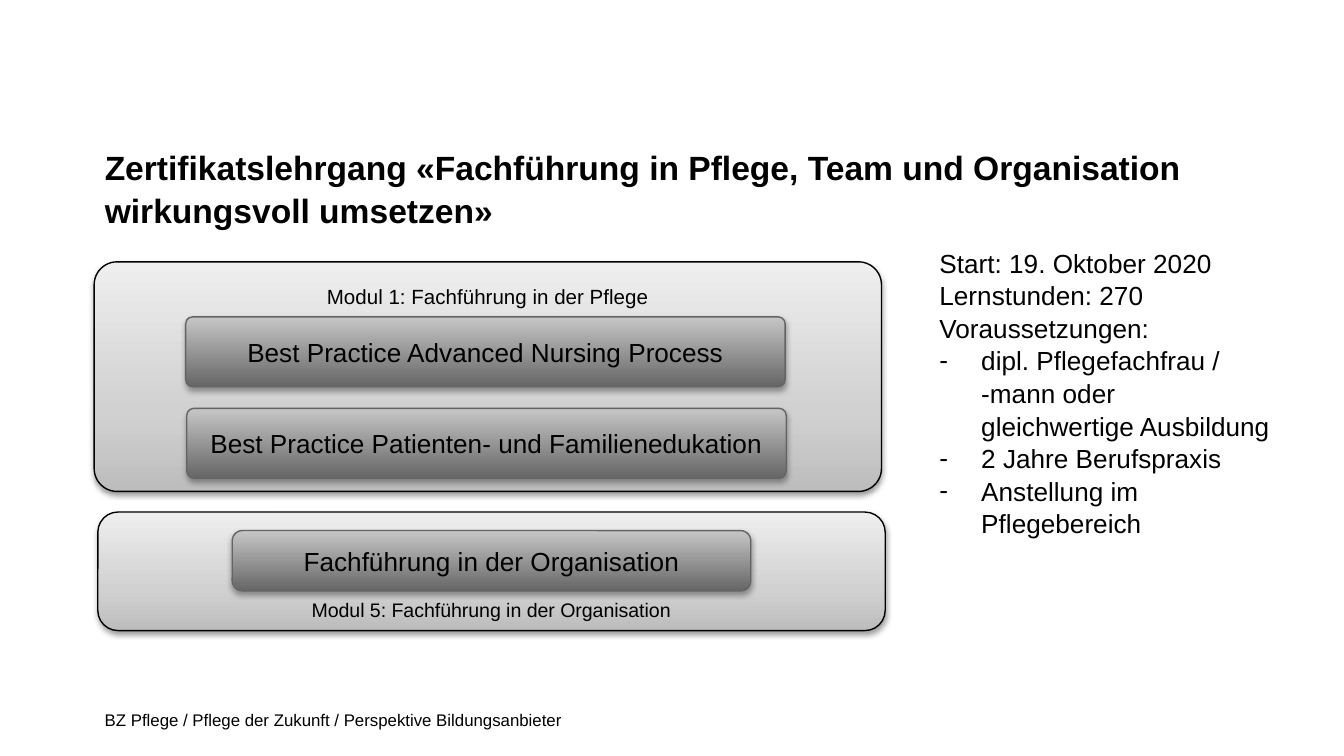
"""Build the slide on the certificate course and its two modules."""
from dataclasses import dataclass
from typing import Any

from lxml.etree import SubElement
from pptx import Presentation
from pptx.dml.color import RGBColor
from pptx.enum.shapes import MSO_SHAPE as Preset
from pptx.enum.text import MSO_ANCHOR as Anchor, MSO_AUTO_SIZE as AutoSize, PP_ALIGN as Align
from pptx.oxml.ns import qn
from pptx.util import Cm, Pt

BLACK = RGBColor(0x00, 0x00, 0x00)
EDGE_GREY = RGBColor(0x64, 0x64, 0x64)
DARK_GREY = RGBColor(0x66, 0x66, 0x66)
MID_GREY = RGBColor(0xC6, 0xC6, 0xC6)
PANEL_LOW = RGBColor(0xBD, 0xBD, 0xBD)
PANEL_MID = RGBColor(0xD1, 0xD1, 0xD1)
PANEL_HIGH = RGBColor(0xEE, 0xEE, 0xEE)
NO_INSETS = dict.fromkeys(("margin_left", "margin_top", "margin_right", "margin_bottom"), 0)
THIN_INSETS = dict.fromkeys(NO_INSETS, Cm(0.08))
MIDDLE = {"word_wrap": True, "vertical_anchor": Anchor.MIDDLE}
CENTRED = {"alignment": Align.CENTER}


@dataclass(frozen=True)
class Area:
    left: float
    top: float
    width: float
    height: float

    def lengths(self) -> tuple:
        return Cm(self.left), Cm(self.top), Cm(self.width), Cm(self.height)


@dataclass(frozen=True)
class Look:
    stops: tuple
    edge: RGBColor
    shadow_alpha: int
    shadow_distance: float


@dataclass(frozen=True)
class Box:
    area: Area
    look: Look
    corner: float
    text: str = ""


@dataclass(frozen=True)
class Label:
    area: Area
    text: str
    size: float
    frame: dict
    paragraph: dict


PANEL = Look(((0, PANEL_LOW), (35, PANEL_MID), (100, PANEL_HIGH)), BLACK, 38, 1.6)
COURSE = Look(((0, DARK_GREY), (100, MID_GREY)), EDGE_GREY, 35, 1.8)

BOXES = (
    Box(Area(1.78, 4.95, 14.88, 4.34), PANEL, 0.1),
    Box(Area(3.51, 5.99, 11.33, 1.32), COURSE, 0.1, "Best Practice Advanced Nursing Process"),
    Box(Area(3.53, 7.72, 11.33, 1.32), COURSE, 0.1, "Best Practice Patienten- und Familienedukation"),
    Box(Area(1.85, 9.68, 14.88, 2.24), PANEL, 0.17),
    Box(Area(4.39, 10.03, 9.8, 1.14), COURSE, 0.17, "Fachführung in der Organisation"),
)
LABELS = (
    Label(Area(1.78, 4.95, 14.88, 1.3), "Modul 1: Fachführung in der Pflege", 11, MIDDLE, CENTRED),
    Label(Area(5.64, 11.18, 7.44, 0.71), "Modul 5: Fachführung in der Organisation", 10.5,
          {"word_wrap": False}, {}),
    Label(Area(1.98, 13.23, 12.4, 0.76), "BZ Pflege / Pflege der Zukunft / Perspektive Bildungsanbieter",
          9, MIDDLE | NO_INSETS, {}),
)
TITLE = "Zertifikatslehrgang «Fachführung in Pflege, Team und Organisation wirkungsvoll umsetzen»"
FACTS = ("Start: 19. Oktober 2020", "Lernstunden: 270", "Voraussetzungen:")
REQUIREMENTS = (
    "dipl. Pflegefachfrau / -mann oder gleichwertige Ausbildung",
    "2 Jahre Berufspraxis",
    "Anstellung im Pflegebereich",
)


def apply(target: Any, formats: dict) -> None:
    for name, value in formats.items():
        setattr(target, name, value)


def write(paragraph: Any, text: str, size: float, formats: dict, bold: bool = False) -> None:
    apply(paragraph, formats)
    run = paragraph.add_run()
    run.text = text
    apply(run.font, {"name": "Arial", "size": Pt(size), "bold": bold})
    run.font.color.rgb = BLACK


def add_colour(parent: Any, colour: RGBColor) -> Any:
    return SubElement(parent, qn("a:srgbClr"), val=str(colour))


def dress(shape: Any, look: Look) -> None:
    properties = shape.element.spPr
    gradient = SubElement(properties, qn("a:gradFill"), rotWithShape="1")
    stops = SubElement(gradient, qn("a:gsLst"))
    for percent, colour in look.stops:
        add_colour(SubElement(stops, qn("a:gs"), pos=str(percent * 1000)), colour)
    SubElement(gradient, qn("a:lin"), ang=str(270 * 60000), scaled="0")
    shape.line.color.rgb = look.edge
    shape.line.width = Pt(0.75)
    effects = SubElement(properties, qn("a:effectLst"))
    shadow = SubElement(effects, qn("a:outerShdw"), blurRad=str(Pt(3.1)),
                        dist=str(Pt(look.shadow_distance)), dir=str(90 * 60000), rotWithShape="0")
    SubElement(add_colour(shadow, BLACK), qn("a:alpha"), val=str(look.shadow_alpha * 1000))


def draw_box(slide: Any, box: Box) -> None:
    shape = slide.shapes.add_shape(Preset.ROUNDED_RECTANGLE, *box.area.lengths())
    shape.adjustments[0] = box.corner
    dress(shape, box.look)
    if box.text:
        apply(shape.text_frame, MIDDLE | THIN_INSETS)
        write(shape.text_frame.paragraphs[0], box.text, 14, CENTRED)


def draw_label(slide: Any, label: Label) -> None:
    frame = slide.shapes.add_textbox(*label.area.lengths()).text_frame
    apply(frame, label.frame)
    write(frame.paragraphs[0], label.text, label.size, label.paragraph)


def place(placeholder: Any, area: Area, formats: dict) -> Any:
    apply(placeholder, dict(zip(("left", "top", "width", "height"), area.lengths())))
    common = {"word_wrap": True, "auto_size": AutoSize.NONE, "vertical_anchor": Anchor.TOP}
    apply(placeholder.text_frame, common | formats)
    return placeholder.text_frame


def fill_conditions(frame: Any) -> None:
    for index, text in enumerate(FACTS + REQUIREMENTS):
        paragraph = frame.add_paragraph() if index else frame.paragraphs[0]
        properties = paragraph._p.get_or_add_pPr()
        bulleted = text in REQUIREMENTS
        indent = Cm(0.79) if bulleted else 0
        properties.set("marL", str(indent))
        properties.set("indent", str(-indent))
        if bulleted:
            SubElement(properties, qn("a:buChar"), char="-")
        else:
            SubElement(properties, qn("a:buNone"))
        write(paragraph, text, 14, {"space_before": Pt(0), "line_spacing": 1.04})


def main() -> None:
    presentation = Presentation()
    apply(presentation, {"slide_width": Cm(25.4), "slide_height": Cm(14.29)})
    slide = presentation.slides.add_slide(presentation.slide_layouts[1])
    title = place(slide.shapes.title, Area(1.98, 2.74, 21.92, 2.21), NO_INSETS)
    write(title.paragraphs[0], TITLE, 18, {"alignment": Align.LEFT, "line_spacing": 1.06}, bold=True)
    fill_conditions(place(slide.placeholders[1], Area(17.5, 4.52, 6.81, 5.64), {}))
    for box in BOXES:
        draw_box(slide, box)
    for label in LABELS:
        draw_label(slide, label)
    presentation.save("out.pptx")


if __name__ == "__main__":
    main()
